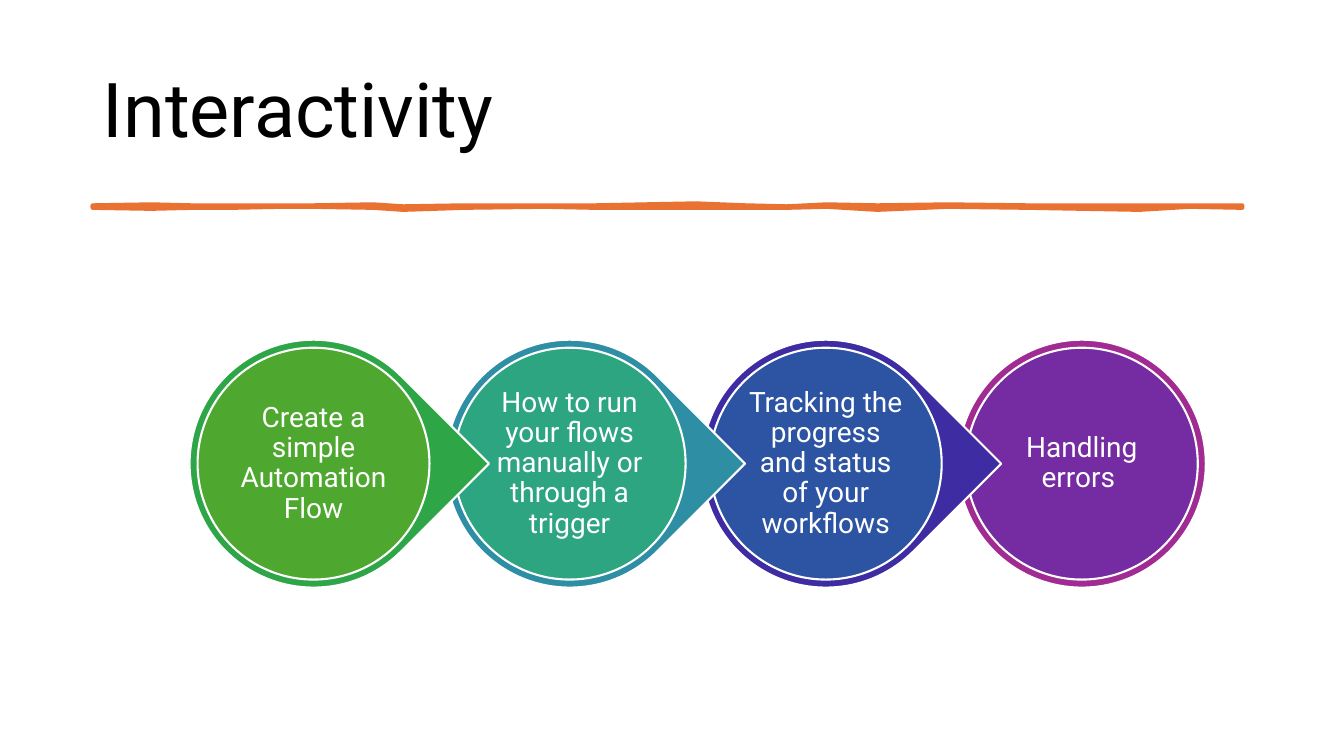
from pptx import Presentation, util as u
from pptx.dml.color import RGBColor
from pptx.enum import shapes, text
from pptx.oxml.ns import qn
from lxml import etree

FONT = "Roboto"
WHITE = "FFFFFF"
ORANGE = "E97132"
TOP, OUTER, INNER, TEXT = 3.37, 2.46, 2.3, 1.64
LEFT, PITCH = 1.88, 2.54
STEPS = [
    ("Create a simple Automation Flow", "2EA648", "4EA72E"),
    ("How to run your flows manually or through a trigger", "2D8EA4", "2DA581"),
    ("Tracking the progress and status of your workflows", "3D2CA2", "2C54A3"),
    ("Handling errors ", "A02B93", "752BA1"),
]
STROKE = [
    (0.92, 2.04, 2.06), (1.5, 2.03, 2.07), (1.9, 2.04, 2.06), (2.3, 2.04, 2.06),
    (2.8, 2.04, 2.05), (3.1, 2.04, 2.05), (3.7, 2.03, 2.06), (4.0, 2.05, 2.08),
    (4.6, 2.04, 2.06), (5.4, 2.04, 2.05), (5.9, 2.04, 2.06), (6.9, 2.02, 2.06),
    (7.4, 2.04, 2.06), (7.8, 2.05, 2.06), (8.2, 2.03, 2.05), (8.7, 2.04, 2.08),
    (9.4, 2.03, 2.05), (10.2, 2.04, 2.06), (11.3, 2.04, 2.08), (11.8, 2.04, 2.05),
    (12.32, 2.04, 2.06),
]


def color(value):
    """Turn a hex string into a colour."""
    return RGBColor.from_string(value)


def paint(sp, fill, line, width):
    """Set fill and outline and drop the shadow."""
    sp.shadow.inherit = False
    sp.fill.solid()
    sp.fill.fore_color.rgb = color(fill)
    sp.line.color.rgb = color(line)
    sp.line.width = u.Pt(width)


def write(tf, content, size, ink, align, inset=None):
    """Write one formatted paragraph, centred vertically."""
    tf.word_wrap = True
    tf.auto_size = text.MSO_AUTO_SIZE.NONE
    tf.vertical_anchor = text.MSO_ANCHOR.MIDDLE
    if inset is not None:
        tf.margin_left = tf.margin_right = u.Inches(inset)
        tf.margin_top = tf.margin_bottom = u.Inches(inset)
    p = tf.paragraphs[0]
    p.alignment = align
    p.line_spacing = 0.9
    r = p.add_run()
    r.text = content
    r.font.name = FONT
    r.font.size = u.Pt(size)
    r.font.color.rgb = color(ink)


def add_title(s, content):
    """Place and fill the title placeholder."""
    sp = s.shapes.title
    sp.left, sp.top = u.Inches(0.92), u.Inches(0.4)
    sp.width, sp.height = u.Inches(11.5), u.Inches(1.45)
    write(sp.text_frame, content, 54, "000000", text.PP_ALIGN.LEFT)


def add_brush_line(s):
    """Draw the uneven rule below the title."""
    upper = [(u.Inches(x), u.Inches(top)) for x, top, _ in STROKE]
    lower = [(u.Inches(x), u.Inches(bottom)) for x, _, bottom in reversed(STROKE)]
    builder = s.shapes.build_freeform(*upper[0])
    builder.add_line_segments(upper[1:] + lower, close=True)
    sp = builder.convert_to_shape()
    paint(sp, ORANGE, ORANGE, 3.25)
    etree.SubElement(sp.element.spPr.find(qn("a:ln")), qn("a:round"))


def square(center_x, size):
    """Return the frame of a square centred on the row of steps."""
    center_y = TOP + OUTER / 2
    return (u.Inches(center_x - size / 2), u.Inches(center_y - size / 2),
            u.Inches(size), u.Inches(size))


def add_step(s, center_x, label, rim, fill, last):
    """Draw one step: pointed rim, inner disc and label."""
    kind = shapes.MSO_SHAPE.OVAL if last else shapes.MSO_SHAPE.TEAR
    sp = s.shapes.add_shape(kind, *square(center_x, OUTER))
    sp.rotation = 0 if last else 45
    paint(sp, rim, WHITE, 1.5)
    disc = s.shapes.add_shape(shapes.MSO_SHAPE.OVAL, *square(center_x, INNER))
    paint(disc, fill, WHITE, 1.5)
    box = s.shapes.add_textbox(*square(center_x, TEXT))
    write(box.text_frame, label, 20, WHITE, text.PP_ALIGN.CENTER, inset=0.03)


def main():
    """Build the slide and save it."""
    prs = Presentation()
    prs.slide_width, prs.slide_height = u.Inches(13.33), u.Inches(7.5)
    s = prs.slides.add_slide(prs.slide_layouts[5])
    add_title(s, "Interactivity")
    add_brush_line(s)
    for i, (label, rim, fill) in reversed(list(enumerate(STEPS))):
        center_x = LEFT + OUTER / 2 + i * PITCH
        add_step(s, center_x, label, rim, fill, last=i == len(STEPS) - 1)
    prs.save("out.pptx")


if __name__ == "__main__":
    main()
